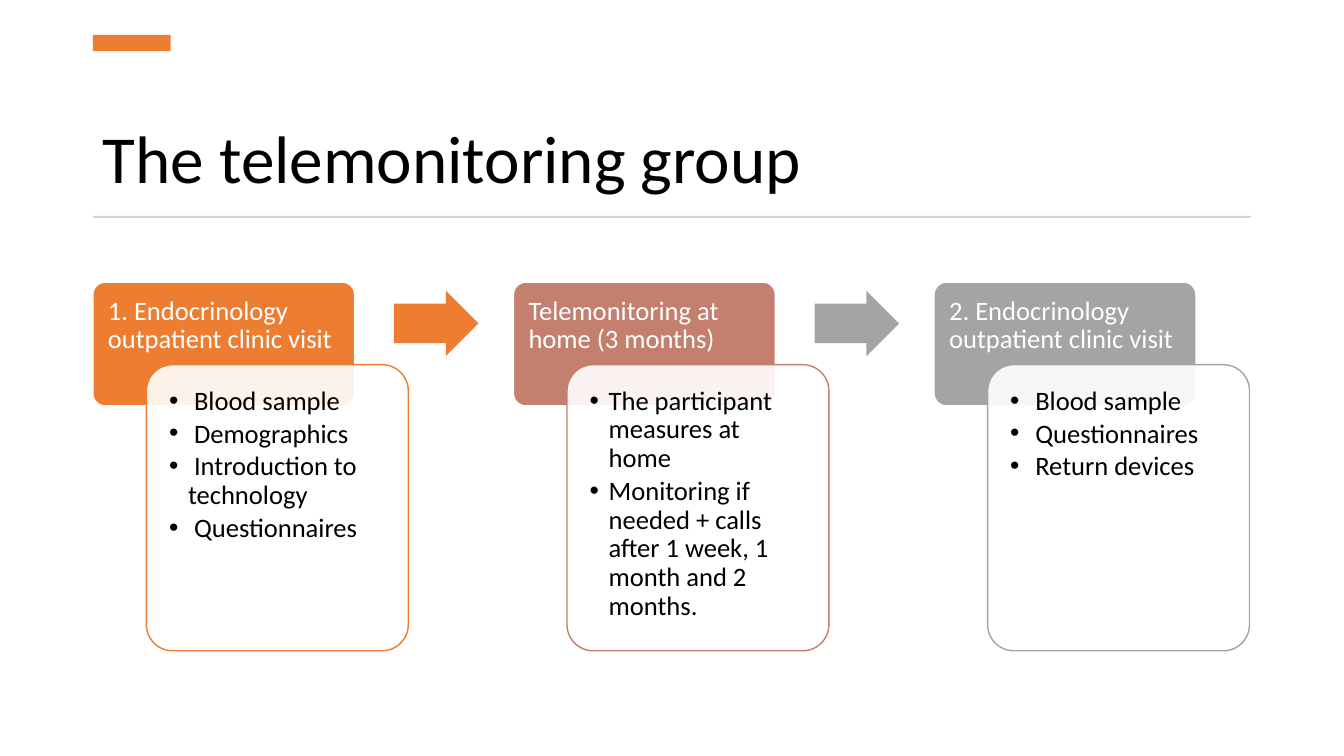
from lxml.etree import SubElement
from pptx import Presentation
from pptx.dml.color import RGBColor
from pptx.enum.shapes import MSO_SHAPE
from pptx.enum.text import MSO_ANCHOR
from pptx.oxml.ns import qn
from pptx.util import Cm, Pt

TITLE = "The telemonitoring group"
STAGES = [
    {"heading": "1. Endocrinology outpatient clinic visit",
     "steps": [" Blood sample", " Demographics",
               " Introduction to technology", " Questionnaires"],
     "color": "orange", "arrow": "orange"},
    {"heading": "Telemonitoring at home (3 months)",
     "steps": ["The participant measures at home",
               "Monitoring if needed + calls after 1 week, 1 month and 2 months."],
     "color": "clay", "arrow": "gray"},
    {"heading": "2. Endocrinology outpatient clinic visit",
     "steps": [" Blood sample", " Questionnaires", " Return devices"],
     "color": "gray", "arrow": None},
]
COLORS = {"orange": "ED7D31", "clay": "C47F6E", "gray": "A4A4A4",
          "rule": "D5D5D5", "white": "FFFFFF", "black": "000000"}

# Lengths in centimetres
LEFT, WIDTH, PITCH = 2.34, 29.18, 10.6
CARD_WIDTH = 6.6
HEAD_TOP, HEAD_HEIGHT, HEADING_HEIGHT = 7.11, 3.12, 2.08
BODY_SHIFT, BODY_HEIGHT, BODY_INSET = 1.35, 7.21, 0.19
BODY_TOP = HEAD_TOP + HEADING_HEIGHT
ARROW_SHIFT, ARROW_WIDTH, ARROW_HEIGHT = 7.59, 2.13, 1.65
ARROW_TOP = HEAD_TOP + (HEADING_HEIGHT - ARROW_HEIGHT) / 2
BULLET_INDENT = 0.48

HEADING_FORMAT = {"size": Pt(19), "color": "white",
                  "margins": (0.38, 0.38, 0.38, 0.2)}
STEP_FORMAT = {"size": Pt(19), "color": "black",
               "margins": (0.38, 0.38, 0.38, 0.38)}
TITLE_FORMAT = {"size": Pt(48), "color": "black",
                "margins": (0.25, 0.13, 0.25, 0.13)}


def rgb(name):
    return RGBColor.from_string(COLORS[name])


def add_box(slide, preset, bounds, fill, line=None, adjustments=(), opacity=None):
    """Add a preset shape; opacity is a percentage of the fill."""
    box = slide.shapes.add_shape(preset, *map(Cm, bounds))
    box.shadow.inherit = False
    box.fill.solid()
    box.fill.fore_color.rgb = rgb(fill)
    if opacity is not None:
        solid = box.fill._xPr.find(qn("a:solidFill"))
        SubElement(solid[0], qn("a:alpha"), val=str(opacity * 1000))
    if line:
        box.line.color.rgb = rgb(line)
        box.line.width = Pt(1)
    else:
        box.line.fill.background()
    for index, value in enumerate(adjustments):
        box.adjustments[index] = value


def add_bullet(paragraph):
    props = paragraph._p.get_or_add_pPr()
    indent = int(Cm(BULLET_INDENT))
    props.set("marL", str(indent))
    props.set("indent", str(-indent))
    color = SubElement(props, qn("a:buClr"))
    SubElement(color, qn("a:srgbClr"), val=COLORS["black"])
    SubElement(props, qn("a:buFont"), typeface="Arial")
    SubElement(props, qn("a:buChar"), char="•")


def add_text(slide, bounds, lines, style, anchor=MSO_ANCHOR.TOP, bulleted=False):
    frame = slide.shapes.add_textbox(*map(Cm, bounds)).text_frame
    left, top, right, bottom = map(Cm, style["margins"])
    settings = {"word_wrap": True, "vertical_anchor": anchor,
                "margin_left": left, "margin_top": top,
                "margin_right": right, "margin_bottom": bottom}
    for name, value in settings.items():
        setattr(frame, name, value)
    for index, line in enumerate(lines):
        paragraph = frame.add_paragraph() if index else frame.paragraphs[0]
        paragraph.line_spacing = 0.9
        if index:
            paragraph.space_before = Pt(2.9)
        if bulleted:
            add_bullet(paragraph)
        run = paragraph.add_run()
        run.text = line
        for name, value in {"name": "Calibri", "size": style["size"]}.items():
            setattr(run.font, name, value)
        run.font.color.rgb = rgb(style["color"])


def add_stage(slide, left, stage):
    rounded = MSO_SHAPE.ROUNDED_RECTANGLE
    add_box(slide, rounded, (left, HEAD_TOP, CARD_WIDTH, HEAD_HEIGHT),
            stage["color"], "white", [0.1])
    add_text(slide, (left, HEAD_TOP, CARD_WIDTH, HEADING_HEIGHT),
             [stage["heading"]], HEADING_FORMAT)
    body_left = left + BODY_SHIFT
    add_box(slide, rounded, (body_left, BODY_TOP, CARD_WIDTH, BODY_HEIGHT),
            "white", stage["color"], [0.1], opacity=90)
    add_text(slide, (body_left + BODY_INSET, BODY_TOP + BODY_INSET,
                     CARD_WIDTH - 2 * BODY_INSET, BODY_HEIGHT - 2 * BODY_INSET),
             stage["steps"], STEP_FORMAT, bulleted=True)
    if stage["arrow"]:
        add_box(slide, MSO_SHAPE.RIGHT_ARROW,
                (left + ARROW_SHIFT, ARROW_TOP, ARROW_WIDTH, ARROW_HEIGHT),
                stage["arrow"], adjustments=[0.6, 0.5])


def main():
    deck = Presentation()
    deck.slide_width, deck.slide_height = Cm(33.87), Cm(19.05)
    slide = deck.slides.add_slide(deck.slide_layouts[6])
    add_text(slide, (LEFT, 1.9, WIDTH, 3.23), [TITLE], TITLE_FORMAT,
             MSO_ANCHOR.BOTTOM)
    add_box(slide, MSO_SHAPE.RECTANGLE, (LEFT, 0.88, 1.96, 0.41), "orange")
    add_box(slide, MSO_SHAPE.RECTANGLE, (LEFT, 5.44, WIDTH, 0.05), "rule")
    for index, stage in enumerate(STAGES):
        add_stage(slide, LEFT + index * PITCH, stage)
    deck.save("out.pptx")


if __name__ == "__main__":
    main()
